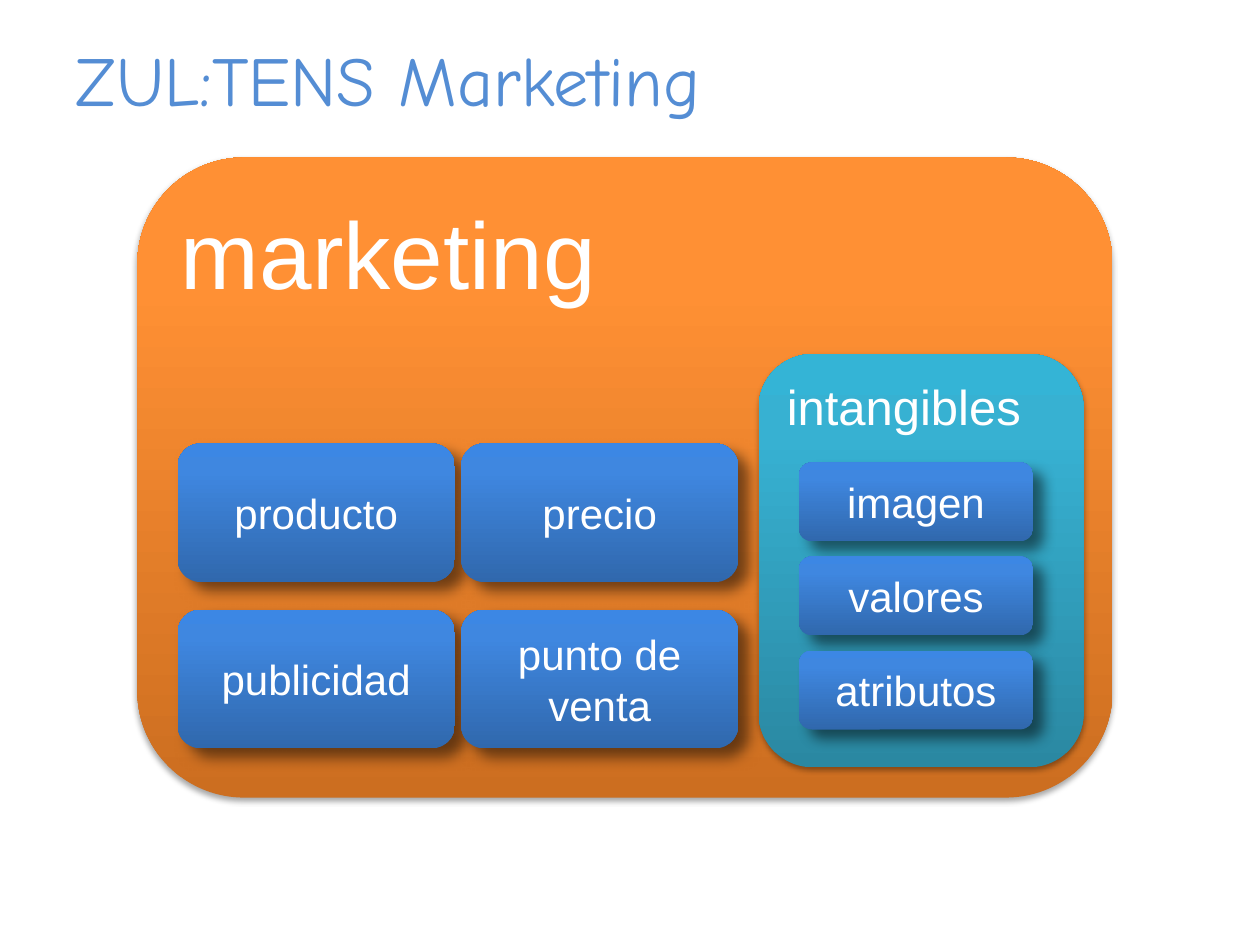
from collections import namedtuple
from dataclasses import dataclass

from lxml import etree
from pptx import Presentation
from pptx.dml.color import RGBColor as RGB
from pptx.enum.shapes import MSO_SHAPE as Kind
from pptx.enum.text import MSO_ANCHOR as Anchor, MSO_AUTO_SIZE as Auto, PP_ALIGN as Align
from pptx.oxml.ns import qn
from pptx.util import Inches, Pt

Box = namedtuple("Box", "x y w h")
Shade = namedtuple("Shade", "alpha blur dist angle")


@dataclass(frozen=True)
class Theme:
    """Colours, fonts, type sizes and shadows of the slide."""
    title: str = "548DD4"
    text: str = "FFFFFF"
    orange: tuple = ("CC6E20", "FF9034", "FF9136")
    teal: tuple = ("2A88A2", "37B1D2", "34B4D6")
    blue: tuple = ("3068AD", "3F87E0", "3C87E4")
    stops: tuple = (0, 80, 100)
    head: str = "Comic Neue"
    body: str = "Arial"
    big: int = 54
    top: int = 40
    mid: int = 28
    small: int = 24
    soft: Shade = Shade(35, 3.1, 1.8, 90)
    deep: Shade = Shade(50, 8, 8, 40)


LOOK = Theme()


def node(parent, tag, **attrs):
    """Add a drawing element with the given attributes."""
    return etree.SubElement(parent, qn(tag), {k: str(v) for k, v in attrs.items()})


def write(shape, text, size, font=LOOK.body, color=LOOK.text,
          align=Align.LEFT, anchor=Anchor.TOP):
    """Put formatted text in a shape."""
    frame = shape.text_frame
    frame.text = text
    frame.word_wrap = True
    frame.auto_size = Auto.NONE
    frame.vertical_anchor = anchor
    para = frame.paragraphs[0]
    para.alignment = align
    para.font.size = Pt(size)
    para.font.name = font
    para.font.color.rgb = RGB.from_string(color)


def block(slide, box, colors, shade):
    """Draw a rounded block with a gradient and a shadow."""
    shape = slide.shapes.add_shape(Kind.ROUNDED_RECTANGLE, *map(Inches, box))
    shape.fill.gradient()
    shape.fill.gradient_angle = 90
    props = shape.element.spPr
    stops = props.find(".//" + qn("a:gsLst"))
    stops.clear()
    for pos, color in zip(LOOK.stops, colors):
        stop = node(stops, "a:gs", pos=pos * 1000)
        node(stop, "a:srgbClr", val=color)
    shape.line.fill.background()
    shape.shadow.inherit = False
    cast = node(props.find(qn("a:effectLst")), "a:outerShdw",
                blurRad=Pt(shade.blur), dist=Pt(shade.dist),
                dir=shade.angle * 60000, rotWithShape=0)
    node(node(cast, "a:srgbClr", val="000000"), "a:alpha", val=shade.alpha * 1000)
    return shape


def cards(slide, box, names, cols, gap_x, gap_y):
    """Fill the box with an even grid of labelled cards."""
    rows = len(names) // cols
    wide = (box.w - gap_x * (cols - 1)) / cols
    high = (box.h - gap_y * (rows - 1)) / rows
    for i, name in enumerate(names):
        row, col = divmod(i, cols)
        spot = Box(box.x + col * (wide + gap_x), box.y + row * (high + gap_y), wide, high)
        card = block(slide, spot, LOOK.blue, LOOK.deep)
        write(card, name, LOOK.small, align=Align.CENTER, anchor=Anchor.MIDDLE)


def heading(slide, box):
    """Place and format the title."""
    title = slide.shapes.title
    title.left, title.top, title.width, title.height = map(Inches, box)
    write(title, "ZUL:TENS Marketing", LOOK.top, font=LOOK.head,
          color=LOOK.title, anchor=Anchor.MIDDLE)


def assets(slide, box):
    """Draw the intangibles panel and its stack of cards."""
    write(block(slide, box, LOOK.teal, LOOK.soft), "intangibles", LOOK.mid)
    area = Box(box.x + 0.32, box.y + 0.86, box.w - 0.72, 2.12)
    cards(slide, area, ["imagen", "valores", "atributos"], 1, 0, 0.12)


def market(slide, box):
    """Draw the marketing panel with its mix and intangibles."""
    write(block(slide, box, LOOK.orange, LOOK.soft), "marketing", LOOK.big)
    mix = ["producto", "precio", "publicidad", "punto de venta"]
    cards(slide, Box(box.x + 0.32, box.y + 2.27, 4.45, 2.42), mix, 2, 0.05, 0.22)
    assets(slide, Box(box.x + 4.93, box.y + 1.56, 2.58, 3.28))


def main():
    """Build and save the slide."""
    deck = Presentation()
    deck.slide_width, deck.slide_height = Inches(10), Inches(7.5)
    slide = deck.slides.add_slide(deck.slide_layouts[5])
    heading(slide, Box(0.5, 0.3, 9, 0.64))
    market(slide, Box(1.09, 1.25, 7.74, 5.08))
    deck.save("out.pptx")


if __name__ == "__main__":
    main()
